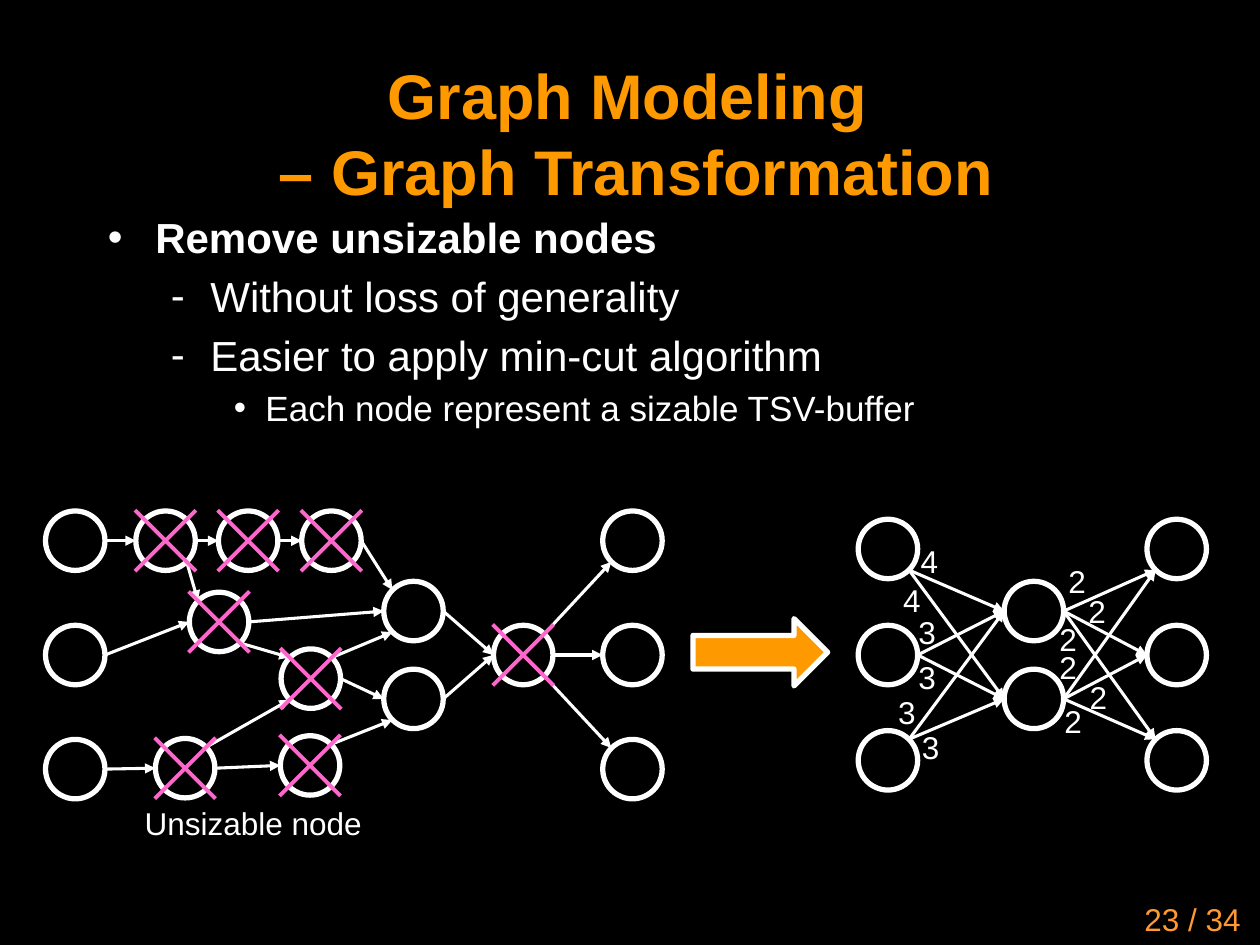
"""Build the graph transformation slide."""
from dataclasses import dataclass
from lxml.etree import SubElement
from pptx import Presentation
from pptx.dml.color import RGBColor
from pptx.enum.shapes import MSO_CONNECTOR, MSO_SHAPE
from pptx.enum.text import MSO_ANCHOR, MSO_AUTO_SIZE, PP_ALIGN
from pptx.oxml.ns import qn
from pptx.util import Pt


@dataclass(frozen=True)
class Theme:
    font: str = "Arial"
    back: str = "000000"
    ink: str = "FFFFFF"
    gold: str = "FF9900"
    page: str = "FF9933"
    pink: str = "FF66CC"
    head: int = 36
    lead: int = 24
    sub: int = 20
    note: int = 18
    ring: float = 3
    edge: float = 1.75


THEME = Theme()
NODE, CROSS = 34, 67

TITLE = ["Graph Modeling", " – Graph Transformation"]
BODY = [
    (0, "Remove unsizable nodes", THEME.lead, True),
    (1, "Without loss of generality", THEME.lead, False),
    (1, "Easier to apply min-cut algorithm", THEME.lead, False),
    (2, "Each node represent a sizable TSV-buffer", THEME.sub, False),
]

KEPT = {
    "in1": (43, 309), "in2": (43, 374.3), "in3": (43, 439.5),
    "mid1": (236.3, 349.2), "mid2": (236.3, 399.4),
    "out1": (361.4, 309), "out2": (361.4, 374.3), "out3": (361.4, 439.5),
    "src1": (507.4, 313.7), "src2": (507.4, 374.3), "src3": (507.4, 434.5),
    "hub1": (590.8, 349.2), "hub2": (590.8, 399.4),
    "end1": (672.4, 313.7), "end2": (672.4, 374.3), "end3": (672.4, 434.5),
}
CUT = {
    "top1": (94.6, 309), "top2": (141.8, 309), "top3": (189.4, 309),
    "up": (125.2, 355.4), "core": (177.6, 387.8),
    "low1": (105.8, 439), "low2": (177.2, 437.4), "join": (299, 374.3),
}
NODES = {**KEPT, **CUT}

EDGES = [
    ("in1", "E", "top1", "W"), ("top1", "E", "top2", "W"),
    ("top1", "SE", "up", "NW"), ("top2", "E", "top3", "W"),
    ("top3", "E", "mid1", "NW"), ("in2", "E", "up", "W"),
    ("in3", "E", "low1", "W"), ("low1", "NE", "core", "SW"),
    ("up", "SE", "core", "NW"), ("up", "E", "mid1", "W"),
    ("core", "NE", "mid1", "SW"), ("low1", "E", "low2", "W"),
    ("low2", "NE", "mid2", "SW"), ("core", "E", "mid2", "W"),
    ("mid1", "E", "join", "W"), ("mid2", "E", "join", "W"),
    ("join", "NE", "out1", "SW"), ("join", "E", "out2", "W"),
    ("join", "SE", "out3", "NW"),
]
SIDES = [("1", "SE", "SW"), ("2", "E", "W"), ("3", "NE", "NW")]
for hub in ("hub1", "hub2"):
    for row, leave, enter in SIDES:
        EDGES.append(("src" + row, leave, hub, "W"))
        EDGES.append((hub, "E", "end" + row, enter))

COSTS = [
    ("4", 519, 306), ("4", 509, 328.3), ("3", 517.7, 347),
    ("3", 517.7, 372.2), ("3", 506.2, 392.4), ("3", 519.8, 412.6),
    ("2", 603.4, 317.5), ("2", 614.9, 334.8), ("2", 598.3, 350.6),
    ("2", 598.3, 366.5), ("2", 615.6, 383.8), ("2", 601.2, 397.4),
]


def tint(code):
    return RGBColor.from_string(code)


def place(shape, *box):
    shape.left, shape.top, shape.width, shape.height = map(Pt, box)


def write(para, text, size, color=THEME.ink, bold=False):
    run = para.add_run()
    run.text = text
    font = run.font
    font.name, font.size, font.bold = THEME.font, Pt(size), bold
    font.color.rgb = tint(color)


def label(slide, text, box, color=THEME.ink, align=PP_ALIGN.LEFT, wrap=False):
    frame = slide.shapes.add_textbox(*map(Pt, box)).text_frame
    frame.word_wrap = wrap
    para = frame.paragraphs[0]
    para.alignment = align
    write(para, text, THEME.note, color)


def draw(slide, kind, box, fill=None, line=None):
    shape = slide.shapes.add_shape(kind, *map(Pt, box))
    shape.shadow.inherit = False
    if fill:
        shape.fill.solid()
        shape.fill.fore_color.rgb = tint(fill)
    else:
        shape.fill.background()
    if line:
        shape.line.color.rgb = tint(line)
        shape.line.width = Pt(THEME.ring)
    else:
        shape.line.fill.background()
    return shape


def port(name, side):
    x, y = NODES[name]
    reach = NODE / 2 * (0.71 if len(side) == 2 else 1)
    across = ("E" in side) - ("W" in side)
    down = ("S" in side) - ("N" in side)
    return Pt(x + reach * across), Pt(y + reach * down)


def link(slide, start, leave, end, enter):
    line = slide.shapes.add_connector(
        MSO_CONNECTOR.STRAIGHT, *port(start, leave), *port(end, enter))
    line.line.color.rgb = tint(THEME.ink)
    line.line.width = Pt(THEME.edge)
    SubElement(line.line._get_or_add_ln(), qn("a:tailEnd"), type="triangle")
    SubElement(line._element.spPr, qn("a:effectLst"))


def around(spot, size):
    return spot[0] - size / 2, spot[1] - size / 2, size, size


def fill_text(slide):
    title, body = slide.shapes.title, slide.placeholders[1]
    place(title, 52.5, 42, 612, 67)
    place(body, 54.5, 117.5, 612, 388)
    for shape in (title, body):
        shape.text_frame.auto_size = MSO_AUTO_SIZE.NONE
    title.text_frame.vertical_anchor = MSO_ANCHOR.MIDDLE
    para = title.text_frame.paragraphs[0]
    para.alignment = PP_ALIGN.CENTER
    write(para, TITLE[0], THEME.head, THEME.gold, True)
    para.add_line_break()
    write(para, TITLE[1], THEME.head, THEME.gold, True)
    frame = body.text_frame
    for spot, (level, text, size, bold) in enumerate(BODY):
        para = frame.add_paragraph() if spot else frame.paragraphs[0]
        para.level = level
        if level == 1:
            SubElement(para._p.get_or_add_pPr(), qn("a:buChar"), char="-")
        write(para, text, size, bold=bold)


def main():
    deck = Presentation()
    deck.slide_width, deck.slide_height = Pt(720), Pt(540)
    slide = deck.slides.add_slide(deck.slide_layouts[1])
    slide.background.fill.solid()
    slide.background.fill.fore_color.rgb = tint(THEME.back)
    fill_text(slide)
    for spot in NODES.values():
        draw(slide, MSO_SHAPE.OVAL, around(spot, NODE), line=THEME.ink)
    for edge in EDGES:
        link(slide, *edge)
    for spot in CUT.values():
        cross = draw(slide, MSO_SHAPE.MATH_MULTIPLY, around(spot, CROSS), THEME.pink)
        cross.adjustments[0] = 0.033
    label(slide, "Unsizable node", (75.6, 456, 140, 29))
    for cost, x, y in COSTS:
        label(slide, cost, (x, y, 24.5, 29))
    draw(slide, MSO_SHAPE.RIGHT_ARROW, (396, 353.5, 77, 38.5), THEME.gold, THEME.ink)
    label(slide, "23 / 34", (566, 510.5, 150, 36), THEME.page, PP_ALIGN.RIGHT, True)
    deck.save("out.pptx")


if __name__ == "__main__":
    main()
